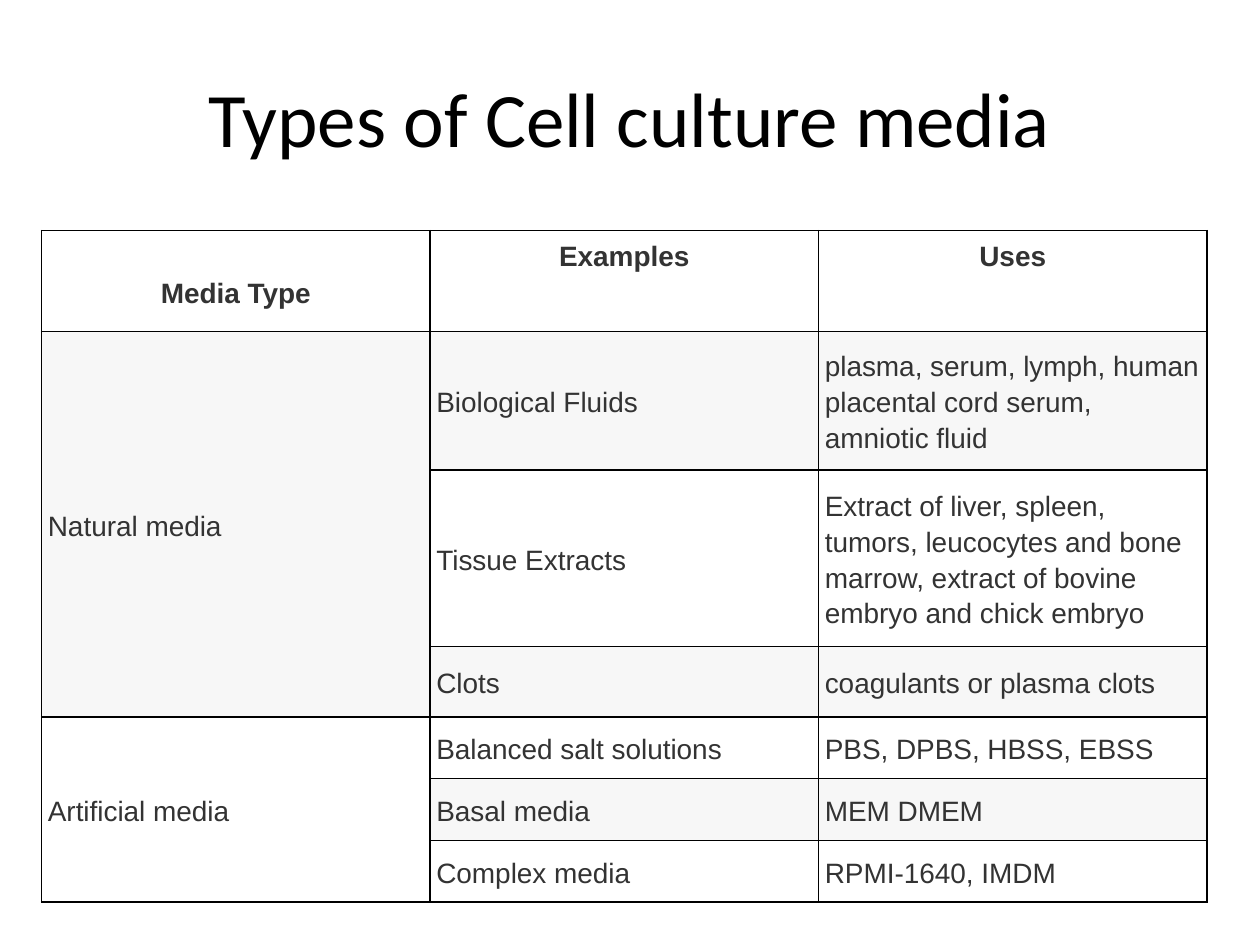
import pptx
import pptx.util
import pptx.dml.color
import pptx.enum.text
import pptx.oxml.ns
from lxml import etree

Inches, Pt = pptx.util.Inches, pptx.util.Pt
RGB = pptx.dml.color.RGBColor.from_string
ALIGN, ANCHOR = pptx.enum.text.PP_ALIGN, pptx.enum.text.MSO_ANCHOR

TITLE = "Types of Cell culture media"
HEADINGS = ["Media Type", "Examples", "Uses"]
MEDIA = [
    ("Natural media", [
        ("Biological Fluids",
         "plasma, serum, lymph, human placental cord serum, amniotic fluid"),
        ("Tissue Extracts",
         "Extract of liver, spleen, tumors, leucocytes and bone marrow, "
         "extract of bovine embryo and chick embryo"),
        ("Clots", "coagulants or plasma clots"),
    ]),
    ("Artificial media", [
        ("Balanced salt solutions", "PBS, DPBS, HBSS, EBSS"),
        ("Basal media", "MEM DMEM"),
        ("Complex media", "RPMI-1640, IMDM"),
    ]),
]
ROW_HEIGHTS = [0.8, 1.1, 1.4, 0.56, 0.49, 0.49, 0.49]
TABLE_LEFT, TABLE_TOP, TABLE_WIDTH = 0.33, 1.83, 9.25
CELL_MARGIN = 0.05
MEDIA_TYPE_DROP = 0.29  # one text line

THEME = {
    "title_font": "Calibri", "title_size": 44, "title_color": "000000",
    "table_font": "Arial", "table_size": 16, "table_color": "333333",
    "line_spacing": 1.15, "bands": ["FFFFFF", "F7F7F7"],
    "border_color": "000000", "border_width": 1,
}


def add_run(paragraph, text, role, bold=False):
    run = paragraph.add_run()
    run.text = text
    run.font.name = THEME[role + "_font"]
    run.font.size = Pt(THEME[role + "_size"])
    run.font.color.rgb = RGB(THEME[role + "_color"])
    run.font.bold = bold


def add_borders(cell):
    qn = pptx.oxml.ns.qn
    properties = cell._tc.get_or_add_tcPr()
    for side in ("a:lnL", "a:lnR", "a:lnT", "a:lnB"):
        line = etree.SubElement(properties, qn(side),
                                w=str(Pt(THEME["border_width"])))
        fill = etree.SubElement(line, qn("a:solidFill"))
        etree.SubElement(fill, qn("a:srgbClr"), val=THEME["border_color"])


def write_cell(cell, text, heading=False):
    paragraph = cell.text_frame.paragraphs[0]
    paragraph.line_spacing = THEME["line_spacing"]
    paragraph.alignment = ALIGN.CENTER if heading else ALIGN.LEFT
    cell.vertical_anchor = ANCHOR.TOP if heading else ANCHOR.MIDDLE
    add_run(paragraph, text, "table", bold=heading)


def add_title(slide):
    title = slide.shapes.title
    title.left, title.top = Inches(0.5), Inches(0.3)
    title.width, title.height = Inches(9), Inches(1.25)
    title.text_frame.vertical_anchor = ANCHOR.MIDDLE
    paragraph = title.text_frame.paragraphs[0]
    paragraph.alignment = ALIGN.CENTER
    add_run(paragraph, TITLE, "title")


def add_media_table(slide):
    table = slide.shapes.add_table(
        len(ROW_HEIGHTS), len(HEADINGS), Inches(TABLE_LEFT), Inches(TABLE_TOP),
        Inches(TABLE_WIDTH), Inches(sum(ROW_HEIGHTS))).table
    table.first_row = table.horz_banding = False
    for index, height in enumerate(ROW_HEIGHTS):
        table.rows[index].height = Inches(height)
        for cell in table.rows[index].cells:
            add_borders(cell)
            cell.fill.solid()
            cell.fill.fore_color.rgb = RGB(THEME["bands"][index % 2])
            cell.margin_left = cell.margin_right = Inches(CELL_MARGIN)
            cell.margin_top = cell.margin_bottom = Inches(CELL_MARGIN)

    for column, heading in enumerate(HEADINGS):
        write_cell(table.cell(0, column), heading, heading=True)
    table.cell(0, 0).margin_top = Inches(CELL_MARGIN + MEDIA_TYPE_DROP)

    row = 1
    for media_type, entries in MEDIA:
        type_cell = table.cell(row, 0)
        type_cell.merge(table.cell(row + len(entries) - 1, 0))
        write_cell(type_cell, media_type)
        for example, uses in entries:
            write_cell(table.cell(row, 1), example)
            write_cell(table.cell(row, 2), uses)
            row += 1


def main():
    deck = pptx.Presentation()
    deck.slide_width, deck.slide_height = Inches(10), Inches(7.5)
    slide = deck.slides.add_slide(deck.slide_layouts.get_by_name("Title Only"))
    add_title(slide)
    add_media_table(slide)
    deck.save("out.pptx")


if __name__ == "__main__":
    main()
